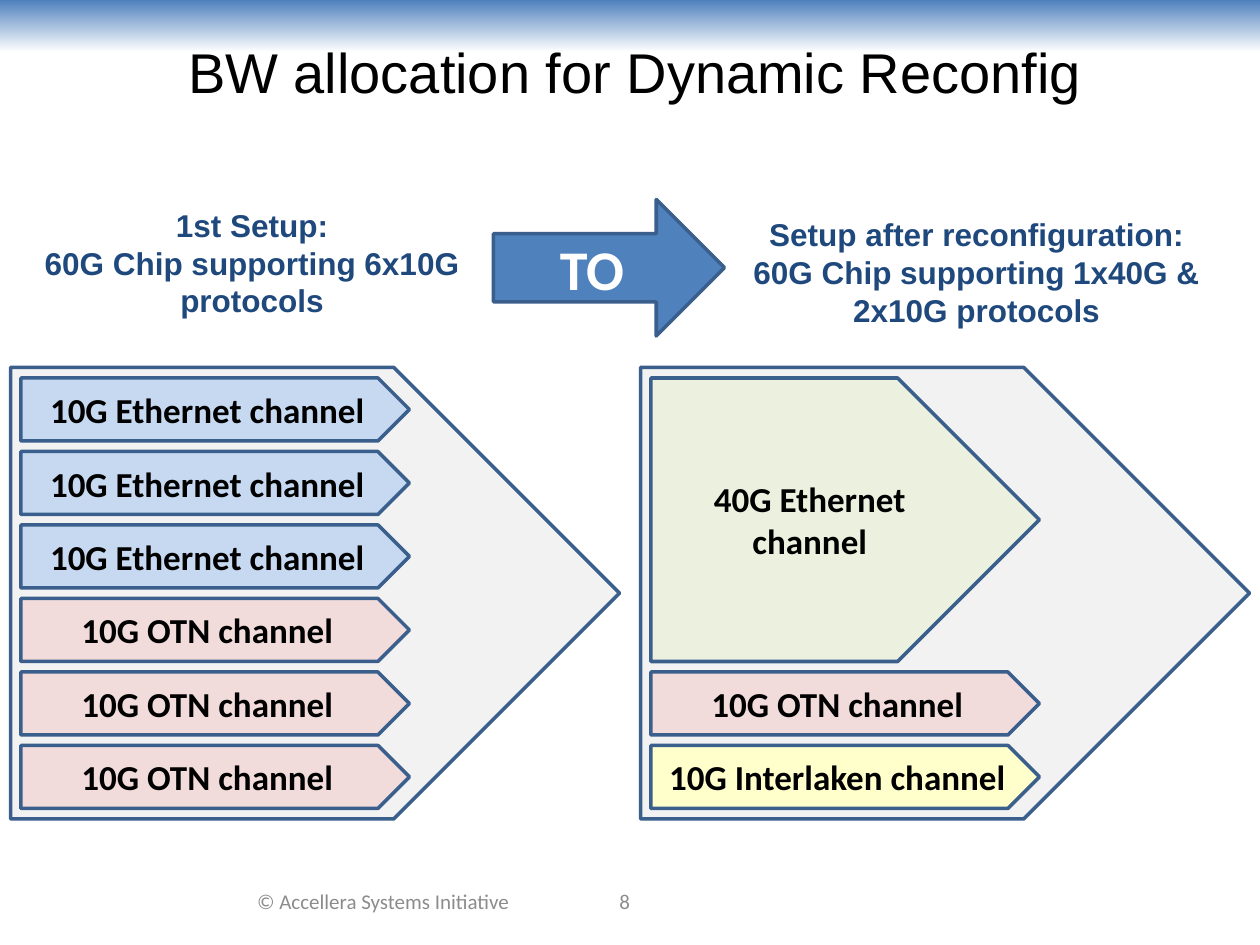
import pptx
import pptx.dml.color
import pptx.enum.shapes
import pptx.enum.text
import pptx.util

Pt = pptx.util.Pt
RGB = pptx.dml.color.RGBColor
KIND = pptx.enum.shapes.MSO_SHAPE
ANCHOR = pptx.enum.text.MSO_ANCHOR
FIT = pptx.enum.text.MSO_AUTO_SIZE
ALIGN = pptx.enum.text.PP_ALIGN

BLACK = RGB(0x00, 0x00, 0x00)
WHITE = RGB(0xFF, 0xFF, 0xFF)
GRAY = RGB(0x8C, 0x8C, 0x8C)
PALE = RGB(0xF2, 0xF2, 0xF2)
NAVY = RGB(0x1F, 0x49, 0x7D)
BLUE = RGB(0x4F, 0x81, 0xBD)
EDGE = RGB(0x3A, 0x5F, 0x8C)
SKY = RGB(0xC6, 0xD9, 0xF1)
PINK = RGB(0xF2, 0xDC, 0xDB)
GREEN = RGB(0xEB, 0xF1, 0xDE)
YELLOW = RGB(0xFF, 0xFF, 0xCC)

TITLE = {"name": "Arial", "size": Pt(32), "bold": False, "color": BLACK}
HEAD = {"name": "Arial", "size": Pt(18), "bold": True, "color": NAVY}
LABEL = {"name": "Calibri", "size": Pt(20), "bold": True, "color": BLACK}
ARROW = {"name": "Calibri", "size": Pt(32), "bold": True, "color": WHITE}
FOOT = {"name": "Calibri", "size": Pt(12), "bold": False, "color": GRAY}

GAP = 6
ROW = 36
ETHER = ("10G Ethernet channel", SKY, 1)
OTN = ("10G OTN channel", PINK, 1)
BEFORE = [ETHER] * 3 + [OTN] * 3
AFTER = [
    ("40G Ethernet channel", GREEN, 4),
    OTN,
    ("10G Interlaken channel", YELLOW, 1),
]


def write(shape, lines, style, **frame):
    """Fill a shape with centred lines in one style."""
    text = shape.text_frame
    for key, value in {"word_wrap": True, **frame}.items():
        setattr(text, key, value)
    text.text = "\n".join(lines)
    for para in text.paragraphs:
        para.alignment = ALIGN.CENTER
        for key, value in style.items():
            if key == "color":
                para.font.color.rgb = value
            else:
                setattr(para.font, key, value)


def label(slide, box, lines, style, **frame):
    """Add a text box with centred lines."""
    shape = slide.shapes.add_textbox(*map(Pt, box))
    write(shape, lines, style, **frame)


def block(slide, kind, box, fill):
    """Add an outlined shape with a plain fill."""
    shape = slide.shapes.add_shape(kind, *map(Pt, box))
    shape.shadow.inherit = False
    shape.fill.solid()
    shape.fill.fore_color.rgb = fill
    shape.line.color.rgb = EDGE
    shape.line.width = Pt(2)
    return shape


def band(slide, box):
    """Add the strip that fades downward from blue to white."""
    shape = slide.shapes.add_shape(KIND.RECTANGLE, *map(Pt, box))
    shape.shadow.inherit = False
    shape.line.fill.background()
    shape.fill.gradient()
    shape.fill.gradient_angle = 270
    for stop, color in zip(shape.fill.gradient_stops, (BLUE, WHITE)):
        stop.color.rgb = color


def chip(slide, box, parts):
    """Add a chip outline with its channels stacked inside."""
    left, top, width, height = box
    block(slide, KIND.PENTAGON, box, PALE)
    y = top + GAP
    for name, fill, span in parts:
        tall = span * (ROW + GAP) - GAP
        plate = block(slide, KIND.PENTAGON, (left + GAP, y, 222, tall), fill)
        write(plate, [name], LABEL, vertical_anchor=ANCHOR.MIDDLE)
        y += tall + GAP


def change(slide, box):
    """Add the two setup headings and the arrow between them."""
    left, top, width, height = box
    label(slide, (left, top, 276, 73),
          ["1st Setup:", "60G Chip supporting 6x10G protocols"],
          HEAD, auto_size=FIT.SHAPE_TO_FIT_TEXT)
    arrow = block(slide, KIND.RIGHT_ARROW, (left + 276, top, 132, height), BLUE)
    write(arrow, ["TO"], ARROW, vertical_anchor=ANCHOR.MIDDLE)
    label(slide, (left + width - 276, top + 5.5, 276, 73),
          ["Setup after reconfiguration:",
           "60G Chip supporting 1x40G & 2x10G protocols"],
          HEAD, auto_size=FIT.SHAPE_TO_FIT_TEXT)


def footer(slide, box):
    """Add the copyright line and the page number."""
    left, top, width, height = box
    label(slide, (left, top, 174, height), ["© Accellera Systems Initiative"],
          FOOT, vertical_anchor=ANCHOR.MIDDLE)
    label(slide, (left + width - 138, top, 138, height), ["8"],
          FOOT, vertical_anchor=ANCHOR.MIDDLE)


def main():
    """Build the slide and save it."""
    deck = pptx.Presentation()
    deck.slide_width, deck.slide_height = Pt(720), Pt(540)
    slide = deck.slides.add_slide(deck.slide_layouts[6])
    band(slide, (0, 0, 720, 30))
    footer(slide, (132, 500.5, 294, 28.75))
    label(slide, (24, 18, 678, 46), ["BW allocation for Dynamic Reconfig"],
          TITLE, auto_size=FIT.SHAPE_TO_FIT_TEXT)
    for left, parts in ((6, BEFORE), (366, AFTER)):
        chip(slide, (left, 210, 348, 258), parts)
    change(slide, (6, 114, 690, 78))
    deck.save("out.pptx")


if __name__ == "__main__":
    main()
